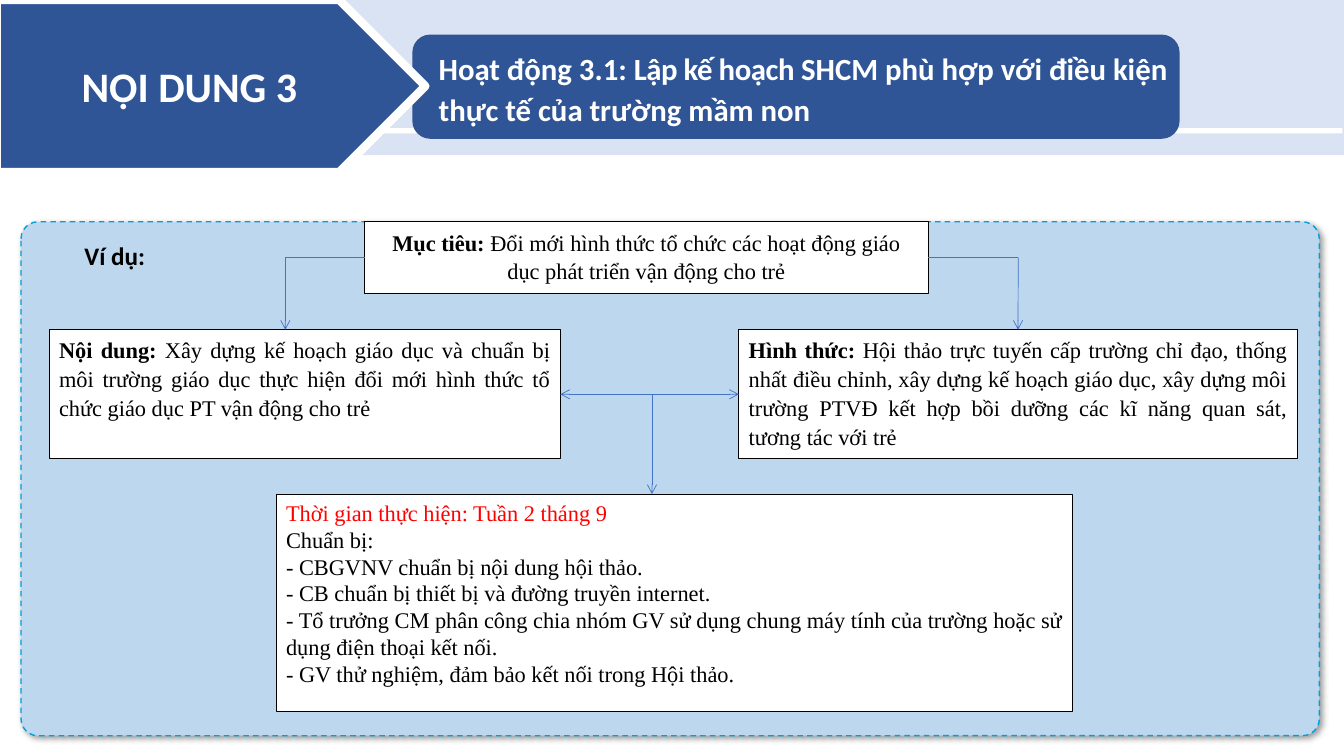
from lxml import etree
from pptx import Presentation
from pptx import util as u
from pptx.dml.color import RGBColor
from pptx.enum import dml, shapes, text
from pptx.oxml import parse_xml
from pptx.oxml.ns import qn

NS = 'xmlns:a="http://schemas.openxmlformats.org/drawingml/2006/main"'
NAVY, SKY, WHITE, BLACK = "2F5597", "BDD7EE", "FFFFFF", "000000"
SERIF = {"name": "Times New Roman", "size": u.Pt(16)}
SANS = {"name": "Calibri", "bold": True}
JUSTIFIED = {"alignment": text.PP_ALIGN.JUSTIFY}
SPACED = {"line_spacing": 1.07, "space_after": u.Pt(8)}
RECT = shapes.MSO_SHAPE.RECTANGLE
ROUNDED = shapes.MSO_SHAPE.ROUNDED_RECTANGLE
TOP, LEFT, BOTTOM, RIGHT = range(4)


def rgb(value):
    return RGBColor.from_string(value)


def apply(target, values):
    for name, value in values.items():
        setattr(target, name, value)


def add_box(slide, kind, place, fill, line=None, width=0.75):
    box = slide.shapes.add_shape(kind, *map(u.Cm, place))
    box.shadow.inherit = False
    box.fill.solid()
    box.fill.fore_color.rgb = rgb(fill)
    if line:
        box.line.color.rgb = rgb(line)
        box.line.width = u.Pt(width)
    else:
        box.line.fill.background()
    return box


def write(frame, paragraphs, font, layout, anchor=text.MSO_ANCHOR.TOP):
    """Fill a frame; each paragraph is a list of (text, colour, font changes)."""
    apply(frame, {"word_wrap": True, "vertical_anchor": anchor})
    for i, runs in enumerate(paragraphs):
        paragraph = frame.add_paragraph() if i else frame.paragraphs[0]
        apply(paragraph, layout)
        for words, colour, changes in runs:
            run = paragraph.add_run()
            run.text = words
            apply(run.font, {**font, **changes})
            run.font.color.rgb = rgb(colour)


def add_card(slide, place, paragraphs, layout):
    card = add_box(slide, RECT, place, WHITE, BLACK)
    write(card.text_frame, paragraphs, SERIF, layout)
    return card


def labelled(label, words):
    return [[(label, BLACK, {"bold": True}), (words, BLACK, {"bold": False})]]


def add_line(slide, start, end, begin=None, finish=None, arrows=()):
    """Draw a line; begin and finish are (shape, side) pairs to join."""
    line = slide.shapes.add_connector(
        shapes.MSO_CONNECTOR.STRAIGHT, *map(u.Cm, (*start, *end)))
    if begin:
        line.begin_connect(*begin)
    if finish:
        line.end_connect(*finish)
    line.line.color.rgb = rgb("4472C4")
    line.line.width = u.Pt(0.5)
    for tag in arrows:
        etree.SubElement(line.line._get_or_add_ln(), qn(f"a:{tag}"), type="arrow")
    etree.SubElement(line.element.spPr, qn("a:effectLst"))


def add_panel(slide):
    panel = add_box(slide, ROUNDED, (0.53, 5.59, 32.72, 12.95), SKY, "00A1DA", 1)
    panel.adjustments[0] = 0.033
    panel.line.dash_style = dml.MSO_LINE.DASH
    effects = panel.element.spPr.find(qn("a:effectLst"))
    effects.append(parse_xml(
        f'<a:outerShdw {NS} blurRad="{u.Pt(4)}" dist="{u.Pt(3)}" dir="2700000" '
        'algn="tl" rotWithShape="0"><a:srgbClr val="000000">'
        '<a:alpha val="40000"/></a:srgbClr></a:outerShdw>'))


def add_scheme(slide):
    form = add_card(slide, (18.62, 8.31, 14.07, 3.25), labelled(
        "Hình thức: ",
        "Hội thảo trực tuyến cấp trường chỉ đạo, thống nhất điều chỉnh, "
        "xây dựng kế hoạch giáo dục, xây dựng môi trường PTVĐ kết hợp bồi "
        "dưỡng các kĩ năng quan sát, tương tác với trẻ"), {**JUSTIFIED, **SPACED})
    preparation = [
        "Chuẩn bị:",
        "- CBGVNV chuẩn bị nội dung hội thảo. ",
        "- CB chuẩn bị thiết bị và đường truyền internet.",
        "- Tổ trưởng CM phân công chia nhóm GV sử dụng chung máy tính của "
        "trường hoặc sử dụng điện thoại kết nối.",
        "- GV thử nghiệm, đảm bảo kết nối trong Hội thảo.",
    ]
    add_card(slide, (6.96, 12.45, 20.07, 5.49),
             [[("Thời gian thực hiện: Tuần 2 tháng 9", "FF0000", {})]]
             + [[(step, BLACK, {})] for step in preparation], JUSTIFIED)
    content = add_card(slide, (1.24, 8.31, 12.88, 3.25), labelled(
        "Nội dung: ",
        "Xây dựng kế hoạch giáo dục và chuẩn bị môi trường giáo dục thực hiện "
        "đổi mới hình thức tổ chức giáo dục PT vận động cho trẻ"),
        {**JUSTIFIED, **SPACED})
    goal = add_card(slide, (9.19, 5.59, 14.2, 1.8), labelled(
        "Mục tiêu: ",
        "Đổi mới hình thức tổ chức các hoạt động giáo dục phát triển vận động "
        "cho trẻ"), {"alignment": text.PP_ALIGN.CENTER, **SPACED})

    left_turn, right_turn, fork = (7.19, 6.49), (25.66, 6.49), (16.43, 9.93)
    add_line(slide, (9.19, 6.49), left_turn, begin=(goal, LEFT))
    add_line(slide, left_turn, (7.19, 8.31), arrows=["tailEnd"])
    add_line(slide, (23.39, 6.49), right_turn, begin=(goal, RIGHT))
    add_line(slide, right_turn, (25.66, 8.31), finish=(form, TOP),
             arrows=["tailEnd"])
    add_line(slide, (14.12, 9.93), (18.62, 9.93), (content, RIGHT), (form, LEFT),
             arrows=["headEnd", "tailEnd"])
    add_line(slide, fork, (16.43, 12.45), arrows=["tailEnd"])


def add_heading(slide):
    add_box(slide, ROUNDED, (10.41, 0.89, 19.3, 2.59), NAVY, "325491", 1)
    plate = add_box(slide, shapes.MSO_SHAPE.PENTAGON, (-0.08, 0, 10.8, 4.34),
                    NAVY, WHITE, 6)
    write(plate.text_frame, [[("NỘI DUNG 3", WHITE, {"size": u.Pt(30)})]], SANS,
          {"alignment": text.PP_ALIGN.CENTER}, text.MSO_ANCHOR.MIDDLE)

    title = slide.shapes.title
    apply(title, {"left": u.Cm(10.8), "top": u.Cm(1.04),
                  "width": u.Cm(18.92), "height": u.Cm(2.29)})
    title.text_frame.auto_size = text.MSO_AUTO_SIZE.NONE
    write(title.text_frame, [[
        ("Hoạt động 3.1: ", WHITE, {}), ("Lập kế hoạch ", WHITE, {}),
        ("SHCM phù hợp với điều kiện thực tế của trường mầm non", WHITE, {}),
    ]], {**SANS, "size": u.Pt(22)},
        {"alignment": text.PP_ALIGN.LEFT, "line_spacing": 1.1,
         "space_before": u.Pt(0)})
    tightened = title.text_frame.paragraphs[0].runs[1]
    tightened.font._element.set("spc", "-30")
    slide.shapes.element.append(title.element)  # bring in front of its bar


def main():
    deck = Presentation()
    apply(deck, {"slide_width": u.Cm(33.87), "slide_height": u.Cm(19.05)})
    slide = deck.slides.add_slide(deck.slide_layouts[5])
    add_box(slide, RECT, (0, 0, 33.87, 3.91), "DAE3F3")
    add_box(slide, RECT, (5.64, 3.23, 28.19, 0.13), WHITE)
    add_panel(slide)
    add_scheme(slide)
    add_heading(slide)
    example = slide.shapes.add_textbox(*map(u.Cm, (1.88, 5.92, 2.77, 1.07)))
    write(example.text_frame, [[("Ví dụ:", BLACK, {"size": u.Pt(18)})]], SANS, {})
    deck.save("out.pptx")


if __name__ == "__main__":
    main()
